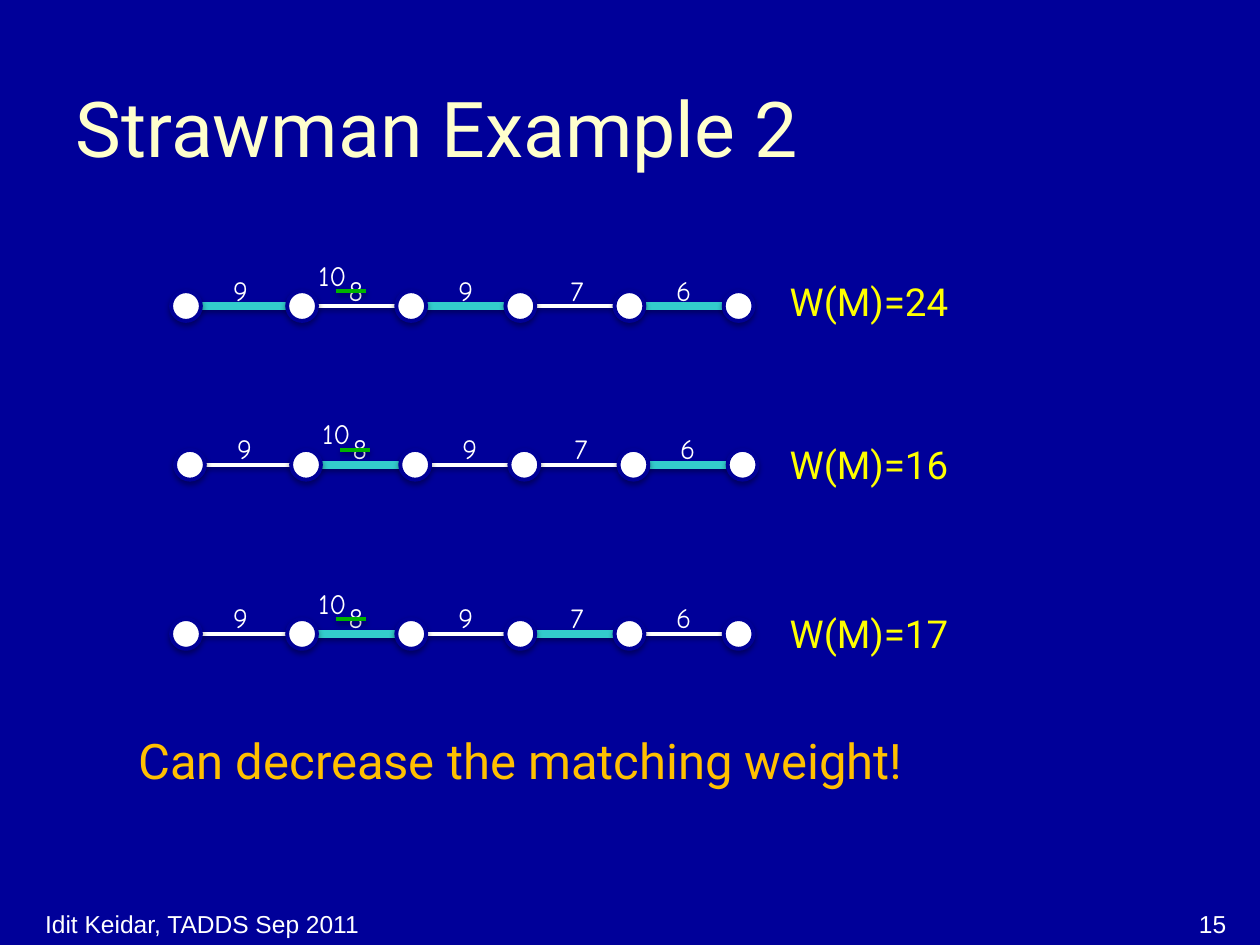
"""Build a slide that compares three matchings on a weighted path."""
from lxml import etree
from pptx import Presentation
from pptx.dml import color
from pptx.enum import shapes, text
from pptx.oxml import ns
from pptx.util import Cm, Pt

SIZE = 0.6
NODES = [0] + [2.34 + 2.2 * i for i in range(5)]
MARKS = [("9", 1), ("8", 3.33), ("9", 5.54), ("7", 7.8), ("6", 9.93)]
ROWS = [
    (3.45, 6.17, (0, 2, 4), "W(M)=24", 5.49),
    (3.53, 9.37, (1, 4), "W(M)=16", 8.76),
    (3.45, 12.78, (1, 3), "W(M)=17", 12.17),
]


def rgb(code):
    return color.RGBColor.from_string(code)


def write(frame, words, size=16, font="Comic Neue", ink="FFFFFF",
          align=text.PP_ALIGN.LEFT, anchor=text.MSO_ANCHOR.TOP, grow=True):
    frame.word_wrap = True
    kinds = text.MSO_AUTO_SIZE
    frame.auto_size = kinds.SHAPE_TO_FIT_TEXT if grow else kinds.NONE
    frame.vertical_anchor = anchor
    para = frame.paragraphs[0]
    para.alignment = align
    run = para.add_run()
    run.text = words
    run.font.size = Pt(size)
    run.font.name = font
    run.font.color.rgb = rgb(ink)


def shade(shape, alpha=35):
    props = shape.element.spPr
    for old in props.findall(ns.qn("a:effectLst")):
        props.remove(old)
    effects = etree.SubElement(props, ns.qn("a:effectLst"))
    outer = etree.SubElement(
        effects, ns.qn("a:outerShdw"), blurRad=str(Pt(3.1)),
        dist=str(Pt(1.8)), dir="5400000", rotWithShape="0")
    tint = etree.SubElement(outer, ns.qn("a:srgbClr"), val="000000")
    etree.SubElement(tint, ns.qn("a:alpha"), val=str(alpha * 1000))


class Deck:
    paper, ink, match, strike = "000099", "FFFFFF", "33CCCC", "00B300"
    rim, total = "000097", "FFFF00"

    def __init__(self):
        self.prs = Presentation()
        self.prs.slide_width, self.prs.slide_height = Cm(25.4), Cm(19.05)
        self.slide = self.prs.slides.add_slide(self.prs.slide_layouts[5])
        fill = self.slide.background.fill
        fill.solid()
        fill.fore_color.rgb = rgb(self.paper)

    def title(self, words):
        box = self.slide.shapes.title
        box.left, box.top, box.width, box.height = (
            Cm(1.27), Cm(0.64), Cm(22.86), Cm(3.84))
        write(box.text_frame, words, size=44, font="Roboto", ink="FFFFCC",
              anchor=text.MSO_ANCHOR.MIDDLE, grow=False)

    def label(self, words, x, y, wide, high, home=None, **style):
        home = home or self.slide.shapes
        box = home.add_textbox(Cm(x), Cm(y), Cm(wide), Cm(high))
        write(box.text_frame, words, **style)

    def line(self, home, start, end, y, ink, width, alpha=35):
        rule = home.add_connector(
            shapes.MSO_CONNECTOR.STRAIGHT, Cm(start), Cm(y), Cm(end), Cm(y))
        rule.line.color.rgb = rgb(ink)
        rule.line.width = Pt(width)
        shade(rule, alpha)

    def node(self, home, x, y):
        dot = home.add_shape(shapes.MSO_SHAPE.OVAL, Cm(x), Cm(y - SIZE / 2),
                             Cm(SIZE), Cm(SIZE))
        dot.fill.solid()
        dot.fill.fore_color.rgb = rgb(self.ink)
        dot.line.color.rgb = rgb(self.rim)
        dot.line.width = Pt(2.25)
        dot.shadow.inherit = False
        shade(dot)

    def chain(self, x, y, picks):
        home = self.slide.shapes.add_group_shape().shapes
        for i, (left, right) in enumerate(zip(NODES, NODES[1:])):
            ink, width = (self.match, 4.5) if i in picks else (self.ink, 2.25)
            self.line(home, x + left + SIZE, x + right, y, ink, width)
        for left in NODES:
            self.node(home, x + left, y)
        for words, left in MARKS:
            self.label(words, x + left, y - 0.79, 1.4, 0.94, home)
        self.line(home, x + 3.33, x + 3.93, y - 0.3, self.strike, 2, 38)
        self.label("10", x + 2.72, y - 1.09, 1.4, 0.94, home)


def main():
    deck = Deck()
    deck.title("Strawman Example 2")
    foot = dict(size=14, font="Arial", anchor=text.MSO_ANCHOR.BOTTOM, grow=False)
    deck.label("Idit Keidar, TADDS Sep 2011", 0.66, 17.96, 8.43, 1.09, **foot)
    deck.label("15", 19.05, 17.96, 5.92, 1.09, align=text.PP_ALIGN.RIGHT, **foot)
    for x, y, picks, words, top in ROWS:
        deck.chain(x, y, picks)
        deck.label(words, 15.67, top, 4.24, 1.19,
                   size=22, font="Roboto", ink=deck.total)
    deck.label("Can decrease the matching weight!", 2.54, 14.6, 18.42, 1.45,
               size=28, font="Roboto", ink="FFC000")
    deck.prs.save("out.pptx")


if __name__ == "__main__":
    main()
